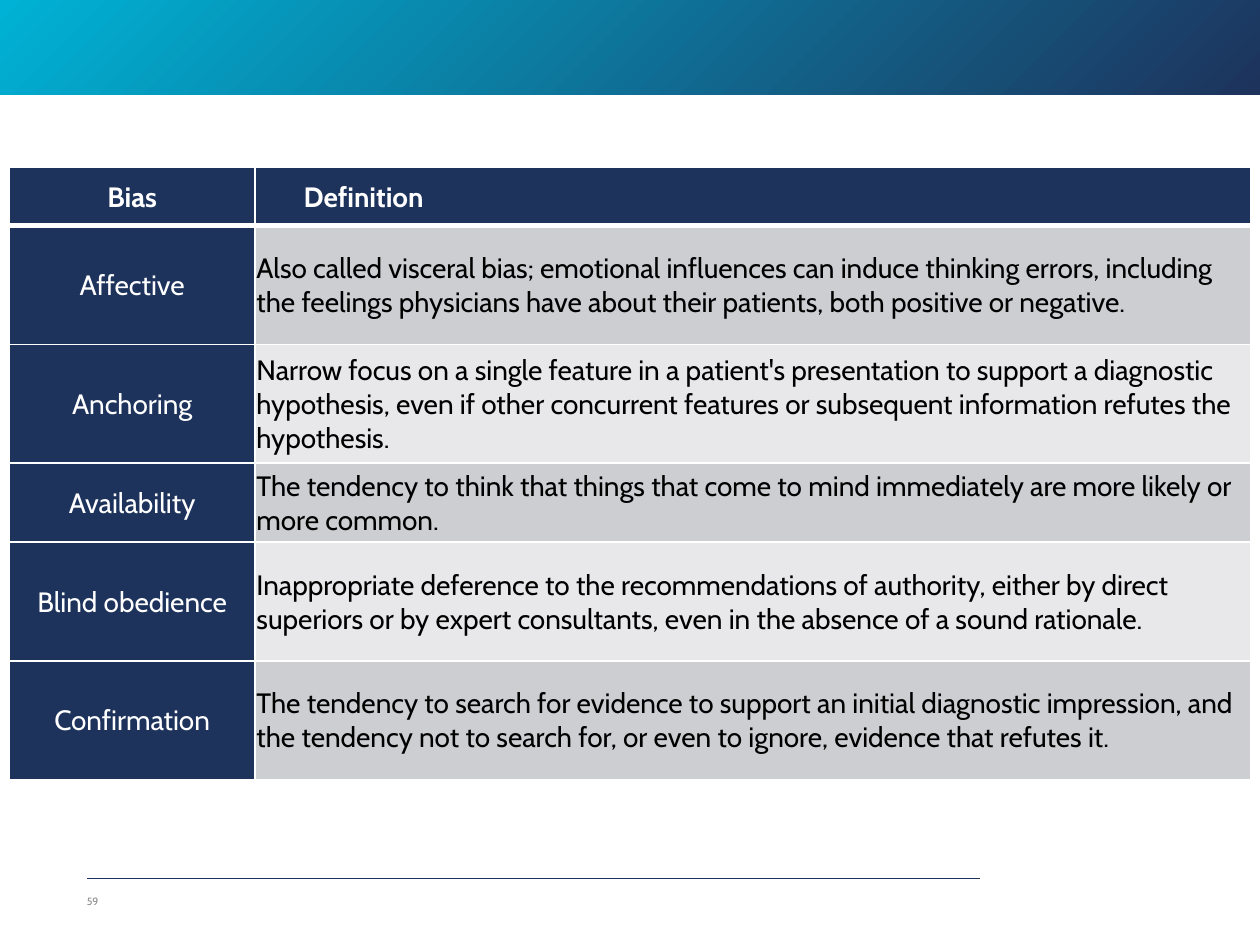
"""Build a slide with a table of diagnostic biases and their definitions."""
import dataclasses

import pptx
import pptx.dml.color
import pptx.enum.dml
import pptx.enum.shapes
import pptx.enum.text
import pptx.oxml
import pptx.oxml.ns
import pptx.util

Cm = pptx.util.Cm
Pt = pptx.util.Pt
RGB = pptx.dml.color.RGBColor.from_string
NS = pptx.oxml.ns.nsdecls("a")


@dataclasses.dataclass(frozen=True)
class Theme:
    font: str = "Cabin"
    navy: str = "1D335C"
    cyan: str = "00B2D5"
    white: str = "FFFFFF"
    black: str = "000000"
    grey: str = "8C8C8C"
    bands: tuple = ("CDCED2", "E8E8EA")
    table_size: int = 16
    number_size: int = 6


theme = Theme()


def add_run(p, text, size, color, bold=False):
    r = p.add_run()
    r.text = text
    r.font.name = theme.font
    r.font.size = Pt(size)
    r.font.bold = bold
    r.font.color.rgb = RGB(color)


def set_borders(cell, top, bottom):
    tcPr = cell._tc.get_or_add_tcPr()
    for side, width in (("L", 1), ("R", 1), ("T", top), ("B", bottom)):
        tcPr.append(pptx.oxml.parse_xml(
            f'<a:ln{side} {NS} w="{Pt(width)}"><a:solidFill>'
            f'<a:srgbClr val="{theme.white}"/></a:solidFill></a:ln{side}>'))


prs = pptx.Presentation()
prs.slide_width = Cm(25.4)
prs.slide_height = Cm(19.05)
s = prs.slides.add_slide(prs.slide_layouts[6])

banner = s.shapes.add_shape(pptx.enum.shapes.MSO_SHAPE.RECTANGLE, 0, 0, prs.slide_width, Cm(1.91))
banner.shadow.inherit = False
banner.line.fill.background()
banner.fill.gradient()
for stop, color in zip(banner.fill.gradient_stops, (theme.navy, theme.cyan)):
    stop.color.rgb = RGB(color)
banner.fill.gradient_stops[0].position = 0
banner.fill.gradient_stops[1].position = 1
lin = banner._element.spPr.find(".//" + pptx.oxml.ns.qn("a:lin"))
lin.getparent().replace(lin, pptx.oxml.parse_xml(
    f'<a:path {NS} path="circle"><a:fillToRect l="100000" t="100000"/></a:path>'))

rule = s.shapes.add_connector(
    pptx.enum.shapes.MSO_CONNECTOR.STRAIGHT, Cm(19.76), Cm(17.7), Cm(1.75), Cm(17.7))
rule.line.color.rgb = RGB(theme.navy)
rule.line.width = Pt(0.4)
rule._element.spPr.append(pptx.oxml.parse_xml(f"<a:effectLst {NS}/>"))

rows = [
    ("Bias", "Definition", 1.17),
    ("Affective", "Also called\u00a0visceral bias; emotional influences can induce thinking errors, "
     "including the feelings physicians have about their patients, both positive or negative.", 2.39),
    ("Anchoring", "Narrow focus on a single feature in a patient's presentation to support a "
     "diagnostic hypothesis, even if other concurrent features or subsequent information "
     "refutes the hypothesis.", 2.39),
    ("Availability", "The tendency to think that things that come to mind immediately are more "
     "likely or more common.", 1.6),
    ("Blind obedience", "Inappropriate deference to the recommendations of authority, either by "
     "direct superiors or by expert consultants, even in the absence of a sound rationale.", 2.39),
    ("Confirmation", "The tendency to search for evidence to support an initial diagnostic "
     "impression, and the tendency not to search for, or even to ignore, evidence that "
     "refutes it.", 2.39),
]
widths = (4.95, 20.07)
height = sum(row[2] for row in rows)
table = s.shapes.add_table(
    len(rows), len(widths), Cm(0.19), Cm(3.38), Cm(sum(widths)), Cm(height)).table
for column, width in zip(table.columns, widths):
    column.width = Cm(width)

for i, (bias, definition, row_height) in enumerate(rows):
    table.rows[i].height = Cm(row_height)
    for j, text in enumerate((bias, definition)):
        cell = table.cell(i, j)
        header = i == 0
        dark = header or j == 0
        set_borders(cell, 3 if i == 1 else 1, 3 if header else 1)
        cell.fill.solid()
        cell.fill.fore_color.rgb = RGB(theme.navy if dark else theme.bands[(i - 1) % 2])
        cell.vertical_anchor = pptx.enum.text.MSO_ANCHOR.MIDDLE
        cell.margin_left = cell.margin_right = cell.margin_top = Cm(0.03)
        cell.margin_bottom = 0
        p = cell.text_frame.paragraphs[0]
        if j == 0:
            p.alignment = pptx.enum.text.PP_ALIGN.CENTER
        elif header:
            p.level = 1
            p._p.get_or_add_pPr().set("marL", str(Cm(0.95)))
        add_run(p, text, theme.table_size, theme.white if dark else theme.black, header)

number = s.shapes.add_textbox(Cm(1.75), Cm(17.65), Cm(0.97), Cm(1.02))
tf = number.text_frame
tf.word_wrap = True
tf.vertical_anchor = pptx.enum.text.MSO_ANCHOR.MIDDLE
tf.margin_left = tf.margin_right = tf.margin_top = tf.margin_bottom = 0
add_run(tf.paragraphs[0], "59", theme.number_size, theme.grey)

prs.save("out.pptx")
